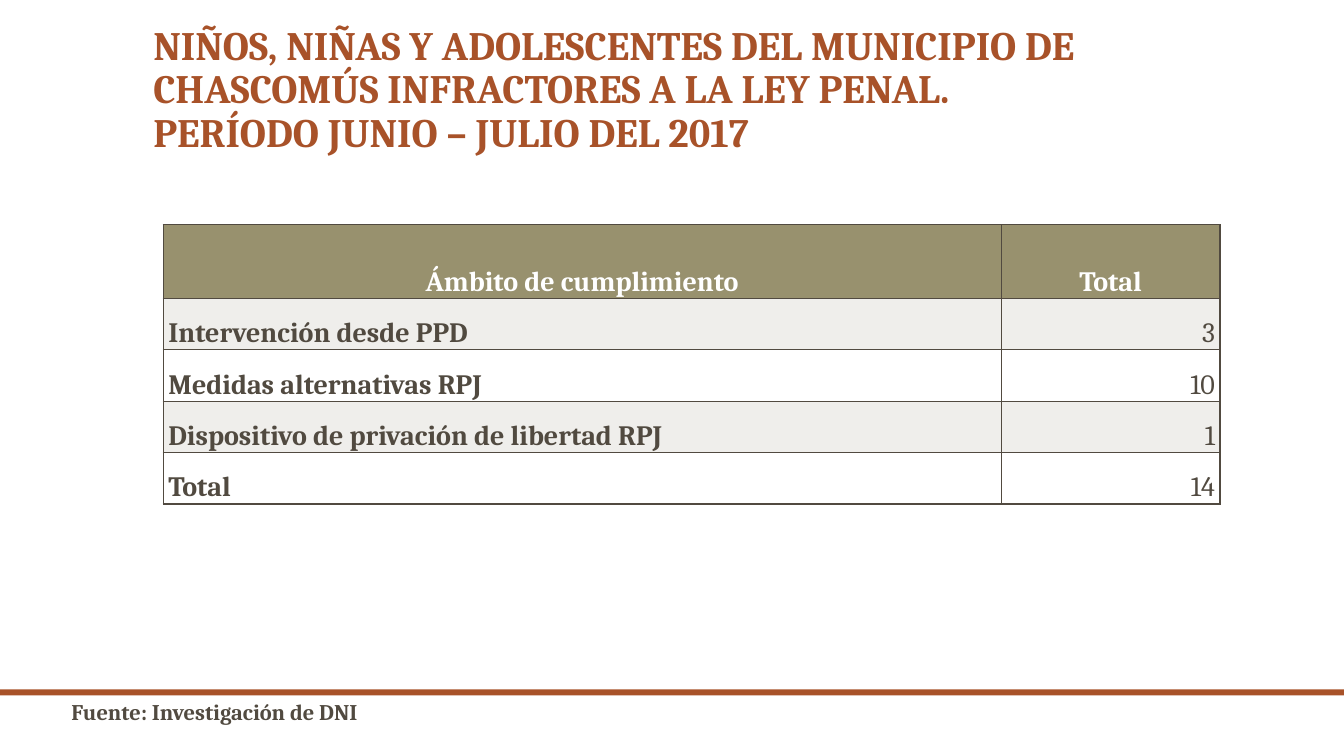
from dataclasses import dataclass

import pptx
import pptx.dml.color
import pptx.enum.shapes
import pptx.enum.text
import pptx.oxml
import pptx.oxml.ns
import pptx.util

PX = 9144
FONT = "Cambria"
RUST, BROWN, OLIVE, PALE, WHITE = "A85229", "514A40", "98916E", "EFEEEB", "FFFFFF"
ALIGN = pptx.enum.text.PP_ALIGN
ANCHOR = pptx.enum.text.MSO_ANCHOR


@dataclass
class Row:
    label: str
    total: str


ROWS = [
    Row("Ámbito de cumplimiento", "Total"),
    Row("Intervención desde PPD", "3"),
    Row("Medidas alternativas RPJ", "10"),
    Row("Dispositivo de privación de libertad RPJ", "1"),
    Row("Total", "14"),
]
COLUMN_WIDTHS = [831, 217]
HEADER_HEIGHT, ROW_HEIGHT = 73, 51


def px(n: int) -> int:
    return pptx.util.Emu(n * PX)


def rgb(color: str) -> pptx.dml.color.RGBColor:
    return pptx.dml.color.RGBColor.from_string(color)


def write(tf, text: str, size: float, color: str, spacing: float,
          align=ALIGN.LEFT, bold: bool = True) -> None:
    p = tf.paragraphs[0]
    p.text = text
    p.alignment = align
    p.line_spacing = spacing
    for r in p.runs:
        r.font.name = FONT
        r.font.size = pptx.util.Pt(size)
        r.font.bold = bold
        r.font.color.rgb = rgb(color)


def add_borders(cell, color: str) -> None:
    tcPr = cell._tc.get_or_add_tcPr()
    for i, side in enumerate(("lnL", "lnR", "lnT", "lnB")):
        tcPr.insert(i, pptx.oxml.parse_xml(
            f'<a:{side} {pptx.oxml.ns.nsdecls("a")} w="12700"><a:solidFill>'
            f'<a:srgbClr val="{color}"/></a:solidFill></a:{side}>'))


def fill_cell(cell, text: str, row: int, col: int) -> None:
    header = row == 0
    cell.margin_left = cell.margin_right = px(5)
    cell.margin_top = cell.margin_bottom = 0
    cell.vertical_anchor = ANCHOR.BOTTOM
    cell.fill.solid()
    cell.fill.fore_color.rgb = rgb(OLIVE if header else PALE if row % 2 else WHITE)
    align = ALIGN.CENTER if header else ALIGN.RIGHT if col else ALIGN.LEFT
    write(cell.text_frame, text, 20, WHITE if header else BROWN, 1.15,
          align, header or col == 0)
    add_borders(cell, BROWN)


def add_title(s) -> None:
    sp = s.shapes.title
    sp.left, sp.top, sp.width, sp.height = px(142), px(20), px(1050), px(140)
    tf = sp.text_frame
    tf.word_wrap = True
    tf.auto_size = pptx.enum.text.MSO_AUTO_SIZE.NONE
    tf.vertical_anchor = ANCHOR.BOTTOM
    write(tf, "NIÑOS, NIÑAS Y ADOLESCENTES DEL MUNICIPIO DE CHASCOMÚS "
              "INFRACTORES A LA LEY PENAL.\vPERÍODO JUNIO – JULIO DEL 2017",
          28.8, RUST, 0.9)


def add_totals_table(s) -> None:
    heights = [HEADER_HEIGHT] + [ROW_HEIGHT] * (len(ROWS) - 1)
    table = s.shapes.add_table(len(ROWS), len(COLUMN_WIDTHS), px(162), px(223),
                               px(sum(COLUMN_WIDTHS)), px(sum(heights))).table
    for column, width in zip(table.columns, COLUMN_WIDTHS):
        column.width = px(width)
    for i, (row, height) in enumerate(zip(ROWS, heights)):
        table.rows[i].height = px(height)
        for j, text in enumerate((row.label, row.total)):
            fill_cell(table.cell(i, j), text, i, j)


def add_footer(s) -> None:
    bar = s.shapes.add_shape(pptx.enum.shapes.MSO_SHAPE.RECTANGLE,
                             0, px(684), px(1333), px(6))
    bar.shadow.inherit = False
    bar.fill.solid()
    bar.fill.fore_color.rgb = rgb(RUST)
    bar.line.fill.background()
    tf = s.shapes.add_textbox(px(61), px(686), px(1213), px(37)).text_frame
    tf.word_wrap = True
    write(tf, "Fuente: Investigación de DNI", 16, BROWN, 1.07)


def main() -> None:
    prs = pptx.Presentation()
    prs.slide_width, prs.slide_height = px(1333), px(750)
    s = prs.slides.add_slide(prs.slide_layouts[5])
    add_title(s)
    add_totals_table(s)
    add_footer(s)
    prs.save("out.pptx")


if __name__ == "__main__":
    main()
